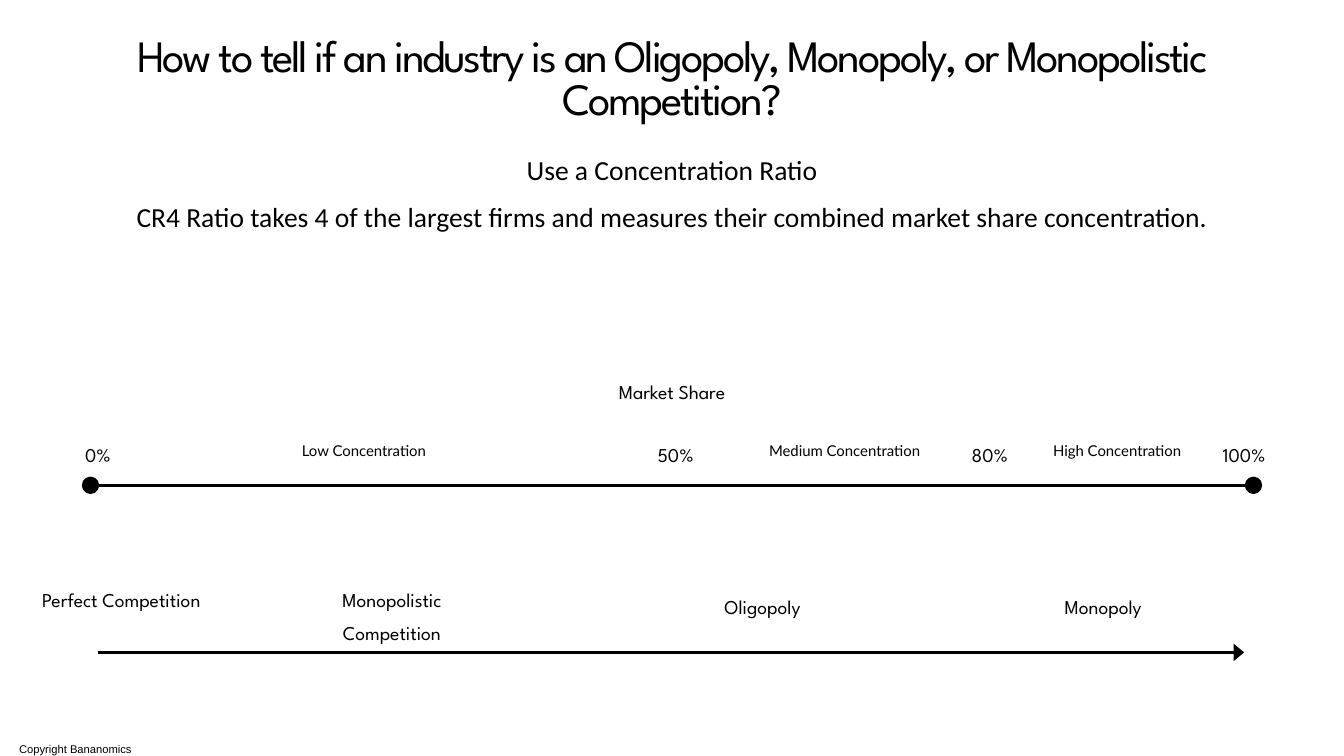
from lxml import etree
from pptx import Presentation
from pptx.dml.color import RGBColor
from pptx.enum import shapes, text
from pptx.oxml.ns import qn
from pptx.util import Pt

TITLE = "How to tell if an industry is an Oligopoly, Monopoly, or Monopolistic Competition?"
BODY = [
    "Use a Concentration Ratio",
    "CR4 Ratio takes 4 of the largest firms and measures their combined market share concentration.",
]
COPY = "Copyright Bananomics"
SHARE = ("Market Share", 720)
MARKS = [("0%", 105), ("50%", 724), ("80%", 1060.5), ("100%", 1333)]
LEVELS = [("Low Concentration", 390), ("Medium Concentration", 905), ("High Concentration", 1197)]
TYPES = [
    ("Perfect Competition", 130, 619),
    ("Monopolistic Competition", 420, 619),
    ("Oligopoly", 817, 626.5),
    ("Monopoly", 1182, 626.5),
]

THEME = {
    "ink": RGBColor(0, 0, 0),
    "paper": RGBColor(255, 255, 255),
    "line": 3.75,
    "title": ("League Spartan", 48, 45.6),
    "body": ("Calibri", 29.5, 50.1),
    "label": ("League Spartan", 21, 35.7),
    "level": ("Lato", 16, 27.2),
    "copy": ("Arial", 12, 16.8),
}
WIDE, HIGH = 1440, 810
LABEL_W = 185


def place(box, x, y, w, h):
    box.left, box.top, box.width, box.height = Pt(x), Pt(y), Pt(w), Pt(h)


def write(box, lines, style, align=text.PP_ALIGN.CENTER):
    face, size, lead = THEME[style]
    frame = box.text_frame
    frame.word_wrap = True
    frame.auto_size = text.MSO_AUTO_SIZE.NONE
    frame.vertical_anchor = text.MSO_ANCHOR.TOP
    frame.margin_left = frame.margin_right = 0
    frame.margin_top = frame.margin_bottom = 0
    for i, line in enumerate(lines):
        para = frame.add_paragraph() if i else frame.paragraphs[0]
        para.alignment = align
        para.line_spacing = Pt(lead)
        para.space_before = para.space_after = Pt(0)
        run = para.add_run()
        run.text = line
        run.font.name, run.font.size = face, Pt(size)
        run.font.color.rgb = THEME["ink"]


def label(slide, line, mid, y, h, style="label"):
    box = slide.shapes.add_textbox(Pt(mid - LABEL_W / 2), Pt(y), Pt(LABEL_W), Pt(h))
    write(box, [line], style)


def axis(slide, x1, x2, y, ends):
    line = slide.shapes.add_connector(
        shapes.MSO_CONNECTOR.STRAIGHT, Pt(x1), Pt(y), Pt(x2), Pt(y))
    line.line.width = Pt(THEME["line"])
    line.line.color.rgb = THEME["ink"]
    stroke = line.line._get_or_add_ln()
    for end, kind, size in ends:
        etree.SubElement(stroke, qn("a:" + end), type=kind, w="lg", len=size)
    etree.SubElement(line._element.spPr, qn("a:effectLst"))


def main():
    deck = Presentation()
    deck.slide_width, deck.slide_height = Pt(WIDE), Pt(HIGH)
    slide = deck.slides.add_slide(deck.slide_layouts[1])
    slide.background.fill.solid()
    slide.background.fill.fore_color.rgb = THEME["paper"]

    title, body = slide.placeholders
    place(title, 76.5, 42, 1287, 95)
    write(title, [TITLE], "title")
    for run in title.text_frame.paragraphs[0].runs:
        run.font._element.set("spc", "-240")

    place(body, 54, 149, 1332, 145)
    write(body, BODY, "body")
    for para in body.text_frame.paragraphs:
        props = para._p.get_or_add_pPr()
        props.set("marL", "0")
        props.set("indent", "0")
        etree.SubElement(props, qn("a:buNone"))

    label(slide, *SHARE, 397, 33)
    for line, mid in MARKS:
        label(slide, line, mid, 464.5, 33)
    for line, mid in LEVELS:
        label(slide, line, mid, 465, 27, "level")
    for line, mid, y in TYPES:
        label(slide, line, mid, y, 68)

    axis(slide, 97, 1343, 520, [("headEnd", "oval", "lg"), ("tailEnd", "oval", "lg")])
    axis(slide, 105, 1333, 699, [("tailEnd", "triangle", "med")])

    note = slide.shapes.add_textbox(Pt(20.5), Pt(793), Pt(LABEL_W), Pt(17))
    write(note, [COPY], "copy", text.PP_ALIGN.LEFT)
    deck.save("out.pptx")


if __name__ == "__main__":
    main()
